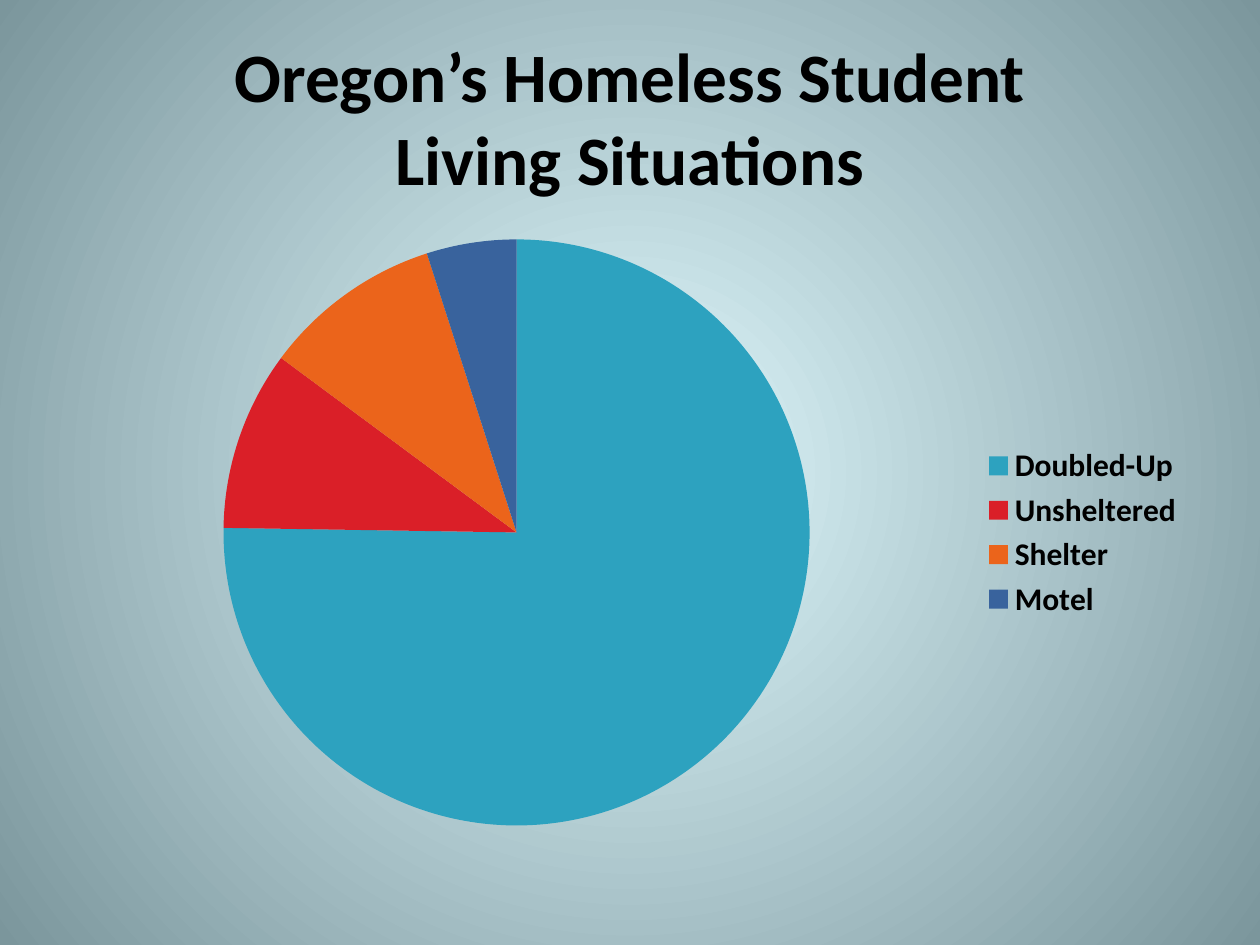
from pptx import Presentation
from pptx.chart.data import CategoryChartData
from pptx.dml.color import RGBColor
from pptx.enum.chart import XL_CHART_TYPE as ChartType, XL_LEGEND_POSITION as LegendPosition
from pptx.enum.text import MSO_ANCHOR as Anchor, PP_ALIGN as Align
from pptx.oxml import parse_xml
from pptx.oxml.ns import nsdecls, qn
from pptx.util import Cm, Pt

FONT = "Calibri"
COLORS = {
    "text": "000000",
    "center": "E1FAFF",
    "edge": "7B969C",
}
TITLE_LINES = ["Oregon’s Homeless Student", "Living Situations"]
LIVING_SITUATIONS = [
    ("Doubled-Up", 76, "2DA2BF"),
    ("Unsheltered", 10, "DA1F28"),
    ("Shelter", 10, "EB641B"),
    ("Motel", 5, "39639D"),
]


def style_font(font, size):
    font.name = FONT
    font.size = Pt(size)
    font.bold = True
    font.color.rgb = RGBColor.from_string(COLORS["text"])


def fill_background(slide):
    """Spread a circular gradient from the middle of the slide."""
    fill = slide.background.fill
    fill.gradient()
    for stop, name in zip(fill.gradient_stops, ("center", "edge")):
        stop.color.rgb = RGBColor.from_string(COLORS[name])
    first, last = fill.gradient_stops
    first.position, last.position = 0, 1
    gradient = slide.element.find(".//" + qn("a:gradFill"))
    linear = gradient.find(qn("a:lin"))
    gradient.replace(linear, parse_xml(
        f'<a:path {nsdecls("a")} path="circle">'
        '<a:fillToRect l="50000" t="50000" r="50000" b="50000"/></a:path>'))


def add_title(slide, left, top, width, height):
    text_frame = slide.shapes.add_textbox(left, top, width, height).text_frame
    text_frame.word_wrap = True
    text_frame.vertical_anchor = Anchor.MIDDLE
    paragraph = text_frame.paragraphs[0]
    paragraph.alignment = Align.CENTER
    for index, line in enumerate(TITLE_LINES):
        if index:
            paragraph.add_line_break()
        run = paragraph.add_run()
        run.text = line
        style_font(run.font, 39.6)


def place_plot(chart, x, y, width, height):
    """Fix the plot area, in fractions of the chart's box."""
    plot_area = chart.element.find(".//" + qn("c:plotArea"))
    for layout in plot_area.findall(qn("c:layout")):
        plot_area.remove(layout)
    sizes = "".join(f'<c:{tag} val="{value}"/>' for tag, value in
                    (("x", x), ("y", y), ("w", width), ("h", height)))
    plot_area.insert(0, parse_xml(
        f'<c:layout {nsdecls("c")}><c:manualLayout><c:layoutTarget val="inner"/>'
        f'<c:xMode val="edge"/><c:yMode val="edge"/>{sizes}'
        '</c:manualLayout></c:layout>'))


def add_pie(slide, left, top, width, height):
    names, values, colors = zip(*LIVING_SITUATIONS)
    data = CategoryChartData()
    data.categories = names
    data.add_series("Series 1", values)
    chart = slide.shapes.add_chart(
        ChartType.PIE, left, top, width, height, data).chart
    chart.has_title = False
    chart.font.name = FONT
    chart.font.size = Pt(10)
    chart.font.color.rgb = RGBColor.from_string(COLORS["text"])

    plot = chart.plots[0]
    plot.vary_by_categories = True
    for index, color in enumerate(colors):
        fill = plot.series[0].points[index].format.fill
        fill.solid()
        fill.fore_color.rgb = RGBColor.from_string(color)
    place_plot(chart, 0.14, 0.03, 0.52, 0.94)

    chart.has_legend = True
    chart.legend.position = LegendPosition.RIGHT
    chart.legend.include_in_layout = False
    style_font(chart.legend.font, 18)


def main():
    presentation = Presentation()
    presentation.slide_width, presentation.slide_height = Cm(25.4), Cm(19.05)
    slide = presentation.slides.add_slide(presentation.slide_layouts[6])
    margin = Cm(1.27)
    content_width = presentation.slide_width - 2 * margin
    fill_background(slide)
    add_title(slide, margin, Cm(0.76), content_width, Cm(3.18))
    add_pie(slide, margin, Cm(4.45), content_width, Cm(12.57))
    presentation.save("out.pptx")


if __name__ == "__main__":
    main()
